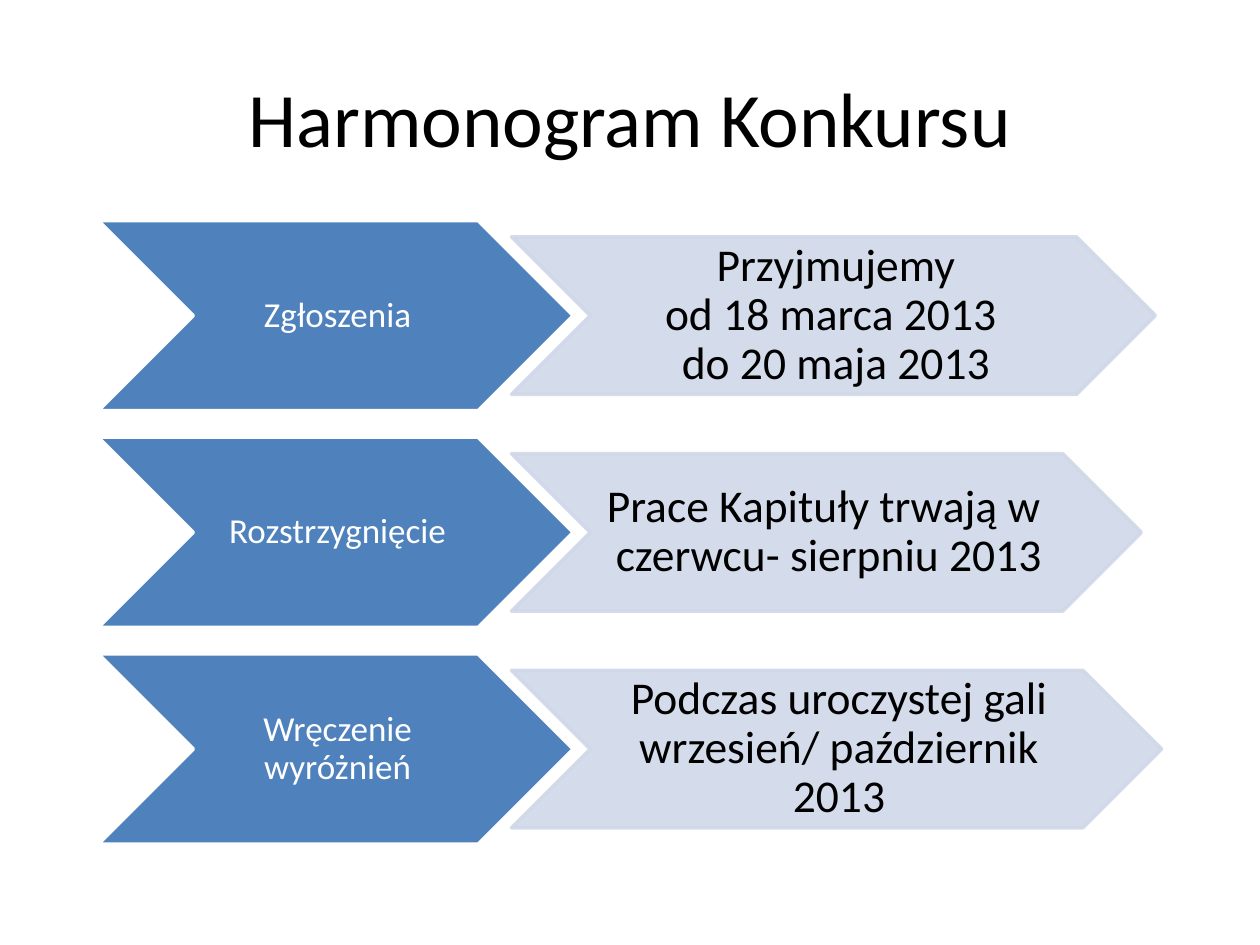
from dataclasses import dataclass

from lxml.etree import SubElement
from pptx import Presentation
from pptx.dml.color import RGBColor
from pptx.enum.shapes import MSO_SHAPE
from pptx.enum.text import MSO_ANCHOR as Anchor, PP_ALIGN as Align
from pptx.oxml.ns import qn
from pptx.slide import Slide
from pptx.text.text import TextFrame
from pptx.util import Emu, Pt

PX = 9144  # EMU per px, 100 px to the inch


@dataclass(frozen=True)
class Theme:
    font: str = "Calibri"
    white: str = "FFFFFF"
    black: str = "000000"
    blue: str = "4F81BD"
    pale: str = "D0D8E8"
    title_size: int = 44
    stage_size: int = 20
    date_size: int = 26
    line_width: int = 2


@dataclass(frozen=True)
class Box:
    left: int
    top: int
    width: int
    height: int

    def emu(self) -> tuple[Emu, ...]:
        return tuple(Emu(n * PX) for n in (self.left, self.top, self.width, self.height))


@dataclass(frozen=True)
class Style:
    fill: str
    line: str
    text: str
    size: int
    inset_x: int
    inset_y: int
    opacity: int = 100


@dataclass(frozen=True)
class Step:
    stage: str
    date: str
    date_width: int


THEME = Theme()
STAGE = Style(THEME.blue, THEME.white, THEME.white, THEME.stage_size, 3, 1)
DATE = Style(THEME.pale, THEME.pale, THEME.black, THEME.date_size, 4, 2, opacity=90)

STEPS = [
    Step("Zgłoszenia", "Przyjmujemy\vod 18 marca 2013 \vdo 20 maja 2013", 511),
    Step("Rozstrzygnięcie", "Prace Kapituły trwają w \vczerwcu- sierpniu 2013", 500),
    Step("Wręczenie wyróżnień", "Podczas uroczystej gali wrzesień/ październik 2013", 516),
]
FIRST_TOP, ROW_PITCH = 175, 172
STAGE_LEFT, STAGE_WIDTH, STAGE_HEIGHT = 78, 377, 151
DATE_LEFT, DATE_HEIGHT = 406, 125


def write(frame: TextFrame, text: str, size: int, color: str) -> None:
    frame.word_wrap = True
    frame.vertical_anchor = Anchor.MIDDLE
    para = frame.paragraphs[0]
    para.text = text
    para.alignment = Align.CENTER
    for span in para.runs:
        span.font.name = THEME.font
        span.font.size = Pt(size)
        span.font.color.rgb = RGBColor.from_string(color)


def add_chevron(page: Slide, box: Box, text: str, style: Style) -> None:
    chevron = page.shapes.add_shape(MSO_SHAPE.CHEVRON, *box.emu())
    chevron.shadow.inherit = False
    chevron.fill.solid()
    chevron.fill.fore_color.rgb = RGBColor.from_string(style.fill)
    chevron.line.color.rgb = RGBColor.from_string(style.line)
    chevron.line.width = Pt(THEME.line_width)
    if style.opacity < 100:
        for color in chevron.element.spPr.iter(qn("a:srgbClr")):
            SubElement(color, qn("a:alpha"), val=str(style.opacity * 1000))

    frame = chevron.text_frame
    frame.margin_left = Emu(style.inset_x * PX)
    frame.margin_right = 0
    frame.margin_top = frame.margin_bottom = Emu(style.inset_y * PX)
    write(frame, text, style.size, style.text)
    frame.paragraphs[0].line_spacing = 0.9


def add_step(page: Slide, row: int, step: Step) -> None:
    top = FIRST_TOP + row * ROW_PITCH
    date_top = top + (STAGE_HEIGHT - DATE_HEIGHT) // 2
    add_chevron(page, Box(STAGE_LEFT, top, STAGE_WIDTH, STAGE_HEIGHT), step.stage, STAGE)
    add_chevron(page, Box(DATE_LEFT, date_top, step.date_width, DATE_HEIGHT), step.date, DATE)


def main() -> None:
    deck = Presentation()
    deck.slide_width, deck.slide_height = Emu(1000 * PX), Emu(750 * PX)
    page = deck.slides.add_slide(deck.slide_layouts.get_by_name("Title Only"))

    title = page.shapes.title
    title.left, title.top, title.width, title.height = Box(50, 30, 900, 125).emu()
    write(title.text_frame, "Harmonogram Konkursu", THEME.title_size, THEME.black)

    for row, step in enumerate(STEPS):
        add_step(page, row, step)
    deck.save("out.pptx")


if __name__ == "__main__":
    main()
